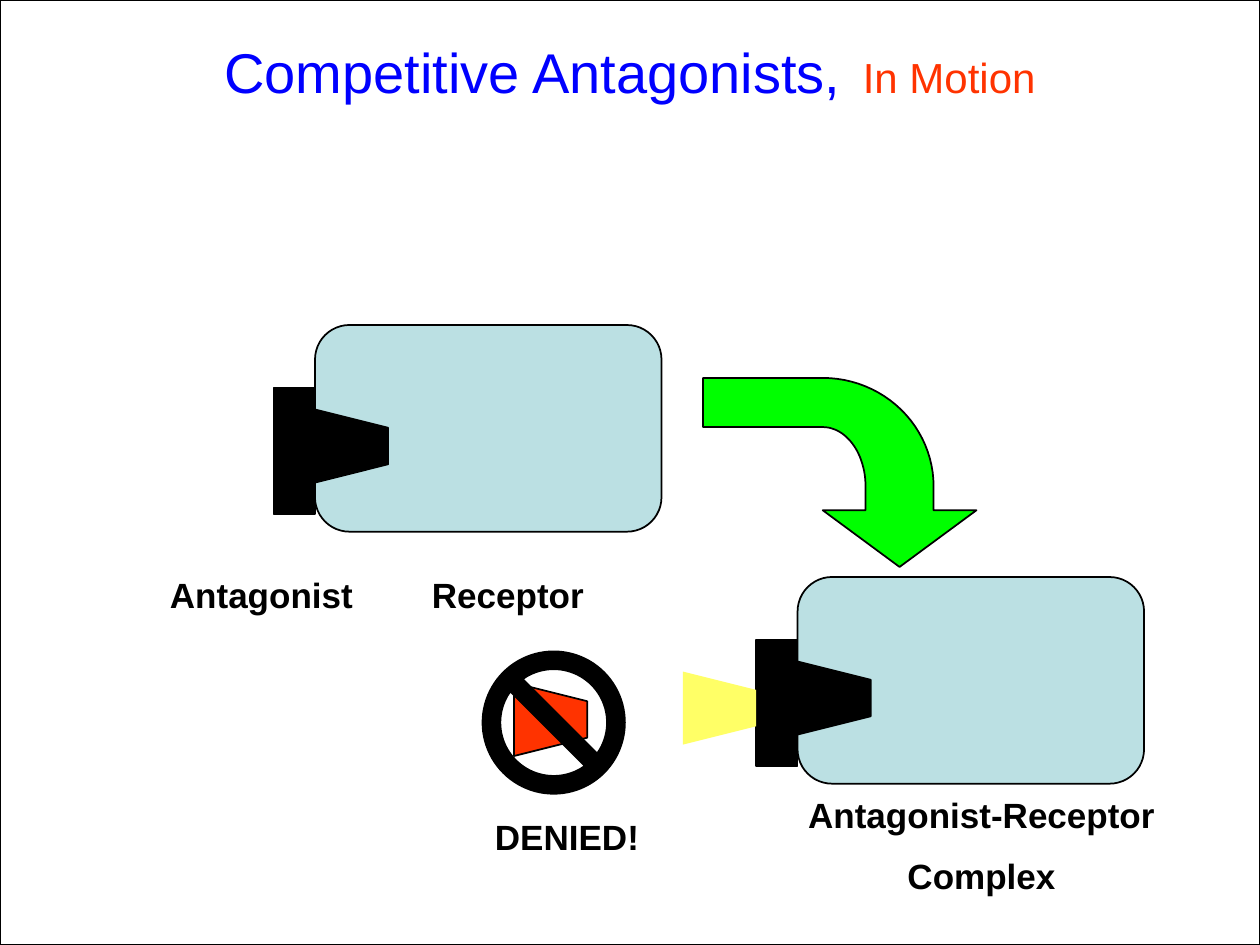
"""Build the slide on competitive antagonists and their receptor."""
import math

import pptx
import pptx.dml.color
import pptx.enum.shapes
import pptx.enum.text
import pptx.util

Inches = pptx.util.Inches
Pt = pptx.util.Pt
Kind = pptx.enum.shapes.MSO_SHAPE
Align = pptx.enum.text.PP_ALIGN
COLORS = {
    "white": "FFFFFF", "black": "000000", "blue": "0000FF", "red": "FF3300",
    "cell": "BBE0E3", "green": "00FF00", "yellow": "FFFF66",
}


def rgb(name):
    return pptx.dml.color.RGBColor.from_string(COLORS[name])


def curve(mid, rad, start, stop, steps=24):
    turns = [math.radians(start + (stop - start) * i / steps) for i in range(steps + 1)]
    return [(mid[0] + rad[0] * math.cos(t), mid[1] - rad[1] * math.sin(t)) for t in turns]


class Page:
    font = "Arial"

    def __init__(self, slide):
        self.slide = slide
        self.shapes = slide.shapes

    def paint(self, shape, fill, line="black"):
        shape.shadow.inherit = False
        shape.fill.solid()
        shape.fill.fore_color.rgb = rgb(fill)
        if line:
            shape.line.color.rgb = rgb(line)
            shape.line.width = Pt(1)
        else:
            shape.line.fill.background()
        return shape

    def shape(self, kind, box, fill, line="black", adjust=None):
        shape = self.shapes.add_shape(kind, *map(Inches, box))
        if adjust is not None:
            shape.adjustments[0] = adjust
        return self.paint(shape, fill, line)

    def wedge(self, left, top, fill, line="black"):
        self.shape(Kind.TRAPEZOID, (left, top, 0.58, 0.58), fill, line, 0.25).rotation = 90

    def bound(self, left, top):
        self.shape(Kind.ROUNDED_RECTANGLE, (left, top, 2.75, 1.64), "cell", adjust=0.167)
        self.wedge(left, top + 0.67, "black")
        self.shape(Kind.RECTANGLE, (left - 0.33, top + 0.5, 0.33, 1), "black")

    def arrow(self):
        mid = (6.53, 3.86)
        points = [(5.58, 3), *curve(mid, (0.88, 0.86), 90, 0),
                  (7.41, 4.05), (7.75, 4.05), (7.14, 4.5), (6.53, 4.05), (6.87, 4.05),
                  *curve(mid, (0.34, 0.47), 0, 90), (5.58, 3.39)]
        spots = [(Inches(x), Inches(y)) for x, y in points]
        form = self.shapes.build_freeform(*spots[0])
        form.add_line_segments(spots[1:], close=True)
        self.paint(form.convert_to_shape(), "green")

    def run(self, para, text, size, color, bold=False):
        run = para.add_run()
        run.text = text
        run.font.name = self.font
        run.font.size = Pt(size)
        run.font.bold = bold
        run.font.color.rgb = rgb(color)

    def label(self, box, lines, align=Align.LEFT, wrap=True):
        frame = self.shapes.add_textbox(*map(Inches, box)).text_frame
        frame.word_wrap = wrap
        frame.auto_size = pptx.enum.text.MSO_AUTO_SIZE.SHAPE_TO_FIT_TEXT
        for i, text in enumerate(lines):
            para = frame.add_paragraph() if i else frame.paragraphs[0]
            para.alignment = align
            if i:
                para.space_before = Pt(11)
            self.run(para, text, 20, "black", True)

    def title(self, box, runs):
        title = self.shapes.title
        title.left, title.top, title.width, title.height = map(Inches, box)
        frame = title.text_frame
        frame.vertical_anchor = pptx.enum.text.MSO_ANCHOR.MIDDLE
        para = frame.paragraphs[0]
        para.alignment = Align.CENTER
        for run in runs:
            self.run(para, *run)
        self.shapes.element.append(title.element)


def main():
    deck = pptx.Presentation()
    deck.slide_width, deck.slide_height = Inches(10), Inches(7.5)
    page = Page(deck.slides.add_slide(deck.slide_layouts[5]))
    page.shape(Kind.RECTANGLE, (0, 0, 10, 7.5), "white")
    page.bound(2.5, 2.58)
    page.label((1.25, 4.5, 1.75, 0.43), ["Antagonist"])
    page.label((3.33, 4.5, 1.67, 0.43), ["Receptor"])
    page.arrow()
    page.bound(6.33, 4.58)
    page.label((6.25, 6.25, 3.08, 0.93), ["Antagonist-Receptor", "Complex"], Align.CENTER)
    page.wedge(4.08, 5.42, "red")
    page.shape(Kind.NO_SYMBOL, (3.83, 5.17, 1.13, 1.13), "black", adjust=0.125)
    page.label((3.83, 6.42, 1.36, 0.44), ["DENIED!"], wrap=False)
    page.wedge(5.42, 5.33, "yellow", None)
    page.title((0.5, 0.08, 9, 0.83), [
        ("Competitive Antagonists,", 32, "blue"),
        (" ", 44, "black"),
        ("In Motion", 24, "red"),
    ])
    deck.save("out.pptx")


if __name__ == "__main__":
    main()
